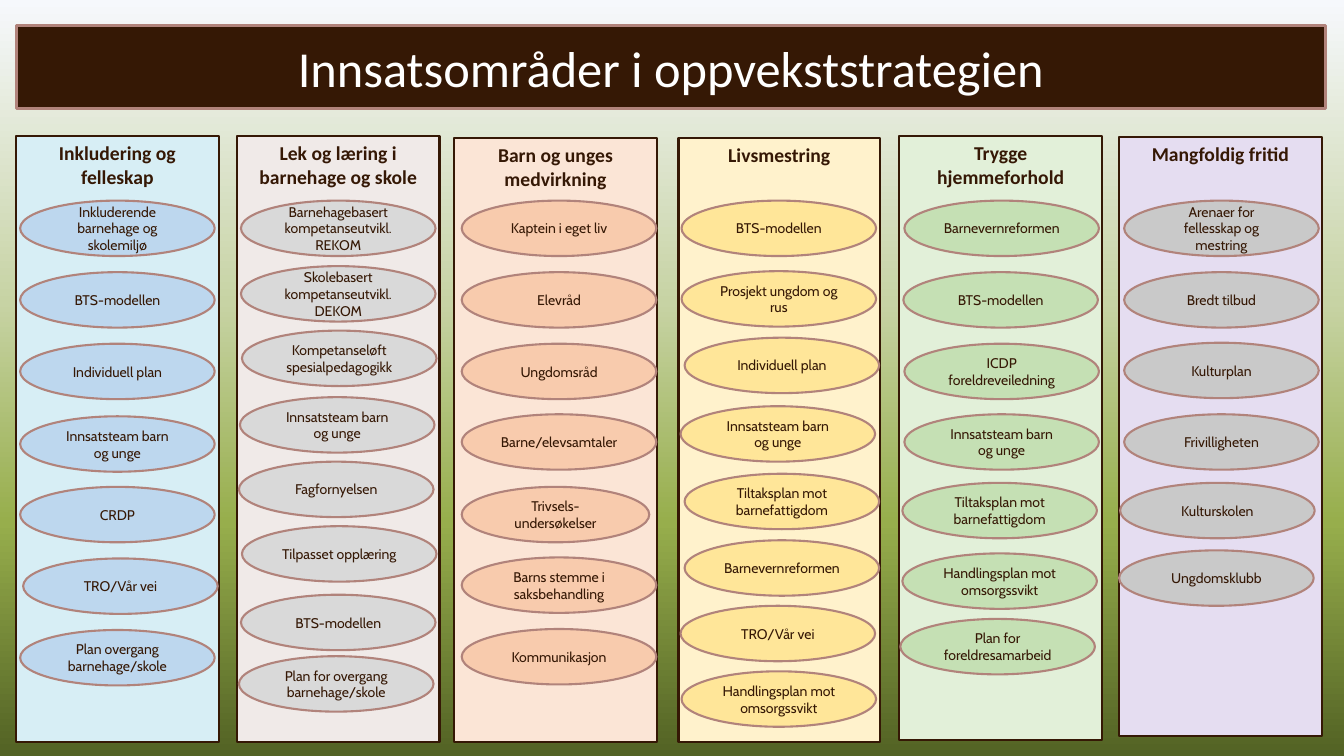
"""Build the slide of focus areas in the childhood strategy."""
import copy
from dataclasses import dataclass

import pptx
import pptx.dml.color
import pptx.enum.shapes
import pptx.enum.text
import pptx.oxml.ns
import pptx.shapes.autoshape
import pptx.slide
import pptx.util

RGBColor = pptx.dml.color.RGBColor
MSO_SHAPE = pptx.enum.shapes.MSO_SHAPE
MSO_ANCHOR = pptx.enum.text.MSO_ANCHOR

EMU_PER_PX = 9144
BROWN = RGBColor(0x35, 0x18, 0x05)
ROSE = RGBColor(0xB1, 0x83, 0x7B)
WHITE = RGBColor(0xFF, 0xFF, 0xFF)
ICE = RGBColor(0xD7, 0xEE, 0xF5)
BLUE = RGBColor(0xBD, 0xD7, 0xEE)
SAND = RGBColor(0xF0, 0xEA, 0xE8)
GREY = RGBColor(0xD9, 0xD9, 0xD9)
PEACH = RGBColor(0xFB, 0xE5, 0xD6)
ORANGE = RGBColor(0xF8, 0xCB, 0xAD)
CREAM = RGBColor(0xFF, 0xF2, 0xCC)
YELLOW = RGBColor(0xFF, 0xE6, 0x99)
MINT = RGBColor(0xE2, 0xF0, 0xD9)
GREEN = RGBColor(0xC5, 0xE0, 0xB4)
LILAC = RGBColor(0xE5, 0xDD, 0xF1)
SILVER = RGBColor(0xC9, 0xC9, 0xC9)
BACKGROUND = (
    (0, RGBColor(0xF6, 0xF8, 0xFC)),
    (0.4, RGBColor(0xC7, 0xD3, 0xA4)),
    (0.69, RGBColor(0x97, 0xAE, 0x4C)),
    (1, RGBColor(0x52, 0x62, 0x24)),
)
FIRST_TOP = 199
MEASURE_WIDTH = 193
MEASURE_HEIGHT = 55


@dataclass(frozen=True)
class Box:
    """Position and size in px."""
    left: int
    top: int
    width: int
    height: int


@dataclass(frozen=True)
class Look:
    """Fill, outline and type of a shape."""
    fill: RGBColor
    line: RGBColor
    line_width: float
    font: str
    size: int
    color: RGBColor
    bold: bool = False
    anchor: MSO_ANCHOR = MSO_ANCHOR.MIDDLE


@dataclass(frozen=True)
class Measure:
    """One measure, with its shift in px from the regular grid."""
    label: str
    right: int = 0
    down: int = 0
    width: int = MEASURE_WIDTH


@dataclass(frozen=True)
class Area:
    """One focus area: a column with evenly pitched measures."""
    title: str
    box: Box
    fill: RGBColor
    measure_fill: RGBColor
    measure_left: int
    pitch: int
    measures: tuple[Measure, ...]


AREAS = (
    Area("Inkludering og felleskap", Box(16, 135, 201, 601), ICE, BLUE, 20, 71, (
        Measure("Inkluderende barnehage og skolemiljø"),
        Measure("BTS-modellen"),
        Measure("Individuell plan"),
        Measure("Innsatsteam barn og unge", down=1),
        Measure("CRDP"),
        Measure("TRO/Vår vei", right=3),
        Measure("Plan overgang barnehage/skole"),
    )),
    Area("Lek og læring i barnehage og skole", Box(235, 135, 201, 601), SAND, GREY, 239, 65, (
        Measure("Barnehagebasert kompetanseutvikl. REKOM"),
        Measure("Skolebasert kompetanseutvikl. DEKOM"),
        Measure("Kompetanseløft spesialpedagogikk", 1, -1),
        Measure("Innsatsteam barn og unge", -1),
        Measure("Fagfornyelsen", -2, -1),
        Measure("Tilpasset opplæring", 1, -2),
        Measure("BTS-modellen", down=1),
        Measure("Plan for overgang barnehage/skole", -2, -3),
    )),
    Area("Barn og unges medvirkning", Box(450, 137, 202, 599), PEACH, ORANGE, 458, 71, (
        Measure("Kaptein i eget liv"),
        Measure("Elevråd"),
        Measure("Ungdomsråd"),
        Measure("Barne/elevsamtaler", down=-1),
        Measure("Trivsels-undersøkelser", width=186),
        Measure("Barns stemme i saksbehandling", down=-1),
        Measure("Kommunikasjon", down=-1),
    )),
    Area("Livsmestring", Box(673, 137, 200, 599), CREAM, YELLOW, 676, 67, (
        Measure("BTS-modellen"),
        Measure("Prosjekt ungdom og rus", down=3),
        Measure("Individuell plan", 3, 2),
        Measure("Innsatsteam barn og unge", -1, 3),
        Measure("Tiltaksplan mot barnefattigdom", 3, 3),
        Measure("Barnevernreformen", 3, 2),
        Measure("TRO/Vår vei", -1),
        Measure("Handlingsplan mot omsorgssvikt", down=-2),
    )),
    Area("Trygge hjemmeforhold", Box(892, 135, 201, 599), MINT, GREEN, 897, 70, (
        Measure("Barnevernreformen"),
        Measure("BTS-modellen", -1, 1),
        Measure("ICDP foreldreveiledning", down=2),
        Measure("Innsatsteam barn og unge", down=2),
        Measure("Tiltaksplan mot barnefattigdom", -2),
        Measure("Handlingsplan mot omsorgssvikt", -2),
        Measure("Plan for foreldresamarbeid", -4, -5),
    )),
    Area("Mangfoldig fritid", Box(1110, 136, 201, 594), LILAC, SILVER, 1115, 70, (
        Measure("Arenaer for fellesskap og mestring"),
        Measure("Bredt tilbud", down=1),
        Measure("Kulturplan", down=1),
        Measure("Frivilligheten", down=2),
        Measure("Kulturskolen", -4),
        Measure("Ungdomsklubb", -5, -3),
    )),
)


def px(length: int) -> pptx.util.Emu:
    """Turn px into EMU."""
    return pptx.util.Emu(length * EMU_PER_PX)


def paint_background(page: pptx.slide.Slide) -> None:
    """Fill the page with a vertical gradient."""
    fill = page.background.fill
    fill.gradient()
    fill.gradient_angle = 270
    stop_list = page.element.find(".//" + pptx.oxml.ns.qn("a:gsLst"))
    while len(stop_list) < len(BACKGROUND):
        stop_list.append(copy.deepcopy(stop_list[-1]))
    for stop, (position, color) in zip(fill.gradient_stops, BACKGROUND):
        stop.position = position
        stop.color.rgb = color


def draw_shape(page: pptx.slide.Slide, kind: MSO_SHAPE, box: Box, text: str,
               look: Look) -> pptx.shapes.autoshape.Shape:
    """Draw a filled, outlined shape with centred text."""
    shape = page.shapes.add_shape(
        kind, px(box.left), px(box.top), px(box.width), px(box.height))
    shape.shadow.inherit = False
    shape.fill.solid()
    shape.fill.fore_color.rgb = look.fill
    shape.line.color.rgb = look.line
    shape.line.width = pptx.util.Pt(look.line_width)
    frame = shape.text_frame
    frame.word_wrap = True
    frame.vertical_anchor = look.anchor
    para = frame.paragraphs[0]
    para.text = text
    para.alignment = pptx.enum.text.PP_ALIGN.CENTER
    para.font.name = look.font
    para.font.size = pptx.util.Pt(look.size)
    para.font.bold = look.bold
    para.font.color.rgb = look.color
    return shape


def draw_area(page: pptx.slide.Slide, area: Area) -> None:
    """Draw a column and its measures."""
    column_look = Look(area.fill, BROWN, 1.5, "Calibri", 14, BROWN, True, MSO_ANCHOR.TOP)
    draw_shape(page, MSO_SHAPE.RECTANGLE, area.box, area.title, column_look)
    measure_look = Look(area.measure_fill, ROSE, 1.5, "Cabin", 10, BROWN)
    for row, measure in enumerate(area.measures):
        box = Box(area.measure_left + measure.right,
                  FIRST_TOP + row * area.pitch + measure.down,
                  measure.width, MEASURE_HEIGHT)
        draw_shape(page, MSO_SHAPE.OVAL, box, measure.label, measure_look)


def main() -> None:
    """Build and save the deck."""
    deck = pptx.Presentation()
    deck.slide_width, deck.slide_height = px(1333), px(750)
    page = deck.slides.add_slide(deck.slide_layouts[6])
    paint_background(page)
    draw_shape(page, MSO_SHAPE.RECTANGLE, Box(16, 25, 1299, 83),
               "Innsatsområder i oppvekststrategien",
               Look(BROWN, ROSE, 2, "Calibri", 36, WHITE))
    for area in AREAS:
        draw_area(page, area)
    deck.save("out.pptx")


if __name__ == "__main__":
    main()
